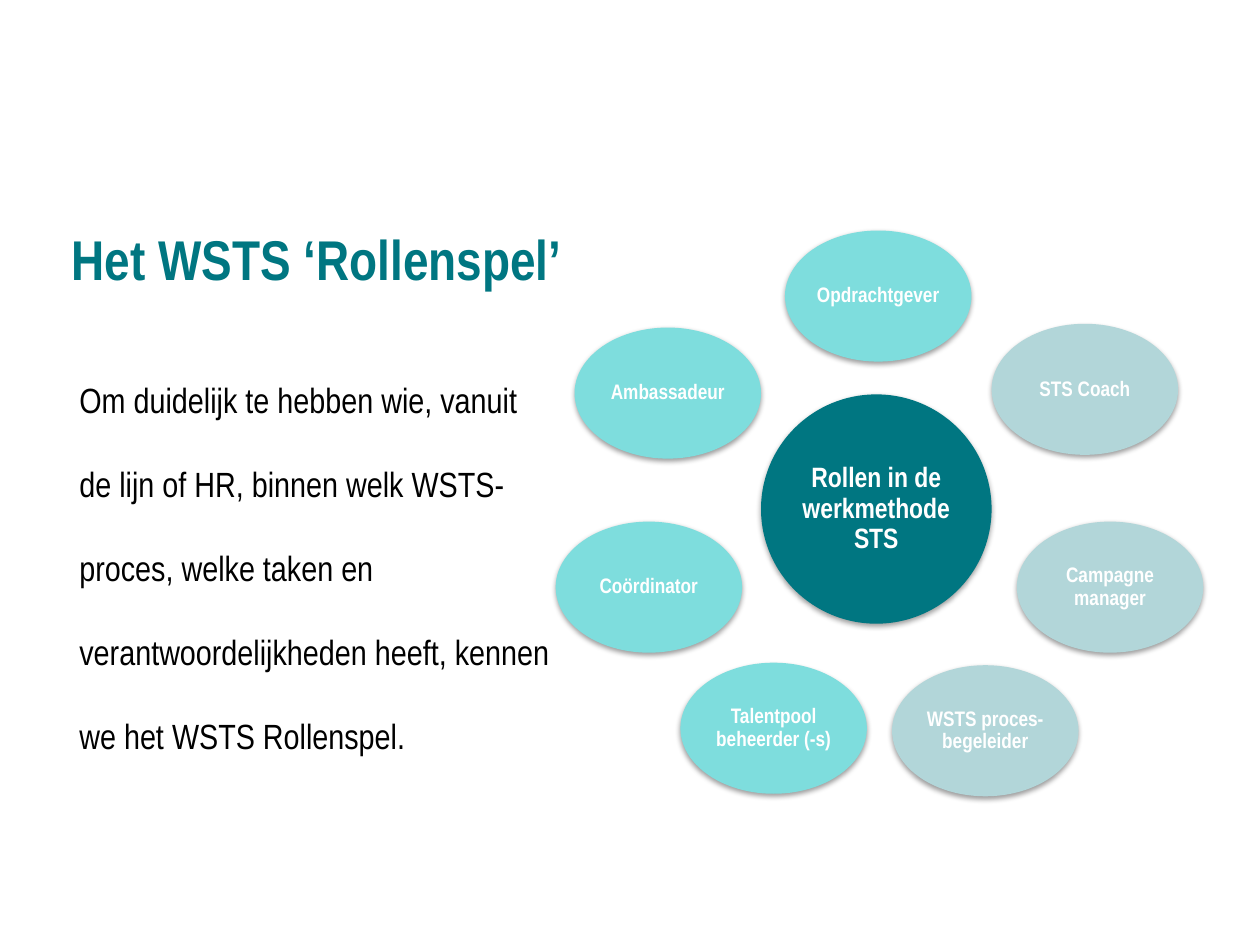
"""Build the slide about the roles in the WSTS method."""
from lxml import etree
from pptx import Presentation
from pptx.dml.color import RGBColor
from pptx.enum import shapes, text
from pptx.oxml import ns
from pptx.util import Inches, Pt

COLOURS = {
    "teal": "007681",
    "aqua": "7EDDDD",
    "mist": "B2D6D9",
    "white": "FFFFFF",
    "black": "000000",
}
FONT = "Arial Narrow"
ROLE_SIZE = (1.48, 1.04)
ROLES = [
    ("Opdrachtgever", 6.23, 1.83, "aqua"),
    ("STS Coach", 7.87, 2.57, "mist"),
    ("Campagne manager", 8.07, 4.14, "mist"),
    ("WSTS proces- begeleider", 7.08, 5.28, "mist"),
    ("Talentpool beheerder (-s)", 5.4, 5.26, "aqua"),
    ("Coördinator", 4.41, 4.14, "aqua"),
    ("Ambassadeur", 4.56, 2.6, "aqua"),
]


def colour(name):
    return RGBColor.from_string(COLOURS[name])


def write(box, words, size, ink, spacing, bold=False, inset=(0, 0, 0, 0)):
    frame = box.text_frame
    frame.word_wrap = True
    frame.margin_left, frame.margin_top, frame.margin_right, frame.margin_bottom = map(Inches, inset)
    para = frame.paragraphs[0]
    para.text = words
    para.line_spacing = spacing
    para.font.name = FONT
    para.font.size = Pt(size)
    para.font.bold = bold
    para.font.color.rgb = colour(ink)
    return frame


def add_text(page, place, *style, **options):
    box = page.shapes.add_textbox(*map(Inches, place))
    return write(box, *style, **options)


def add_soft_shadow(shape):
    shape.shadow.inherit = False
    effects = shape._element.spPr.find(ns.qn("a:effectLst"))
    shadow = etree.SubElement(effects, ns.qn("a:outerShdw"), blurRad=str(Pt(3.1)),
                              dist=str(Pt(1.6)), dir="5400000", rotWithShape="0")
    ink = etree.SubElement(shadow, ns.qn("a:srgbClr"), val=COLOURS["black"])
    etree.SubElement(ink, ns.qn("a:alpha"), val="38000")


def add_oval(page, place, words, size, fill):
    oval = page.shapes.add_shape(shapes.MSO_SHAPE.OVAL, *map(Inches, place))
    oval.fill.solid()
    oval.fill.fore_color.rgb = colour(fill)
    oval.line.fill.background()
    add_soft_shadow(oval)
    frame = write(oval, words, size, "white", 0.9, bold=True, inset=(0, 0.02, 0, 0.02))
    frame.vertical_anchor = text.MSO_ANCHOR.MIDDLE
    frame.paragraphs[0].alignment = text.PP_ALIGN.CENTER


def main():
    deck = Presentation()
    deck.slide_width, deck.slide_height = Inches(10), Inches(7.5)
    page = deck.slides.add_slide(deck.slide_layouts[6])

    title = add_text(page, (0.57, 1.78, 8.86, 0.58), "Het WSTS ‘Rollenspel’",
                     32, "teal", Pt(35), bold=True)
    title.vertical_anchor = text.MSO_ANCHOR.MIDDLE
    add_text(page, (0.28, 2.67, 4.09, 4.51),
             "Om duidelijk te hebben wie, vanuit de lijn of HR, binnen welk WSTS-proces, "
             "welke taken en verantwoordelijkheden heeft, kennen we het WSTS Rollenspel.",
             20, "black", 2.0, inset=(0.35, 0, 0, 0))

    add_oval(page, (6.04, 3.13, 1.83, 1.82), "Rollen in de werkmethode STS", 16, "teal")
    for name, left, top, fill in ROLES:
        add_oval(page, (left, top, *ROLE_SIZE), name, 12, fill)
    deck.save("out.pptx")


if __name__ == "__main__":
    main()
